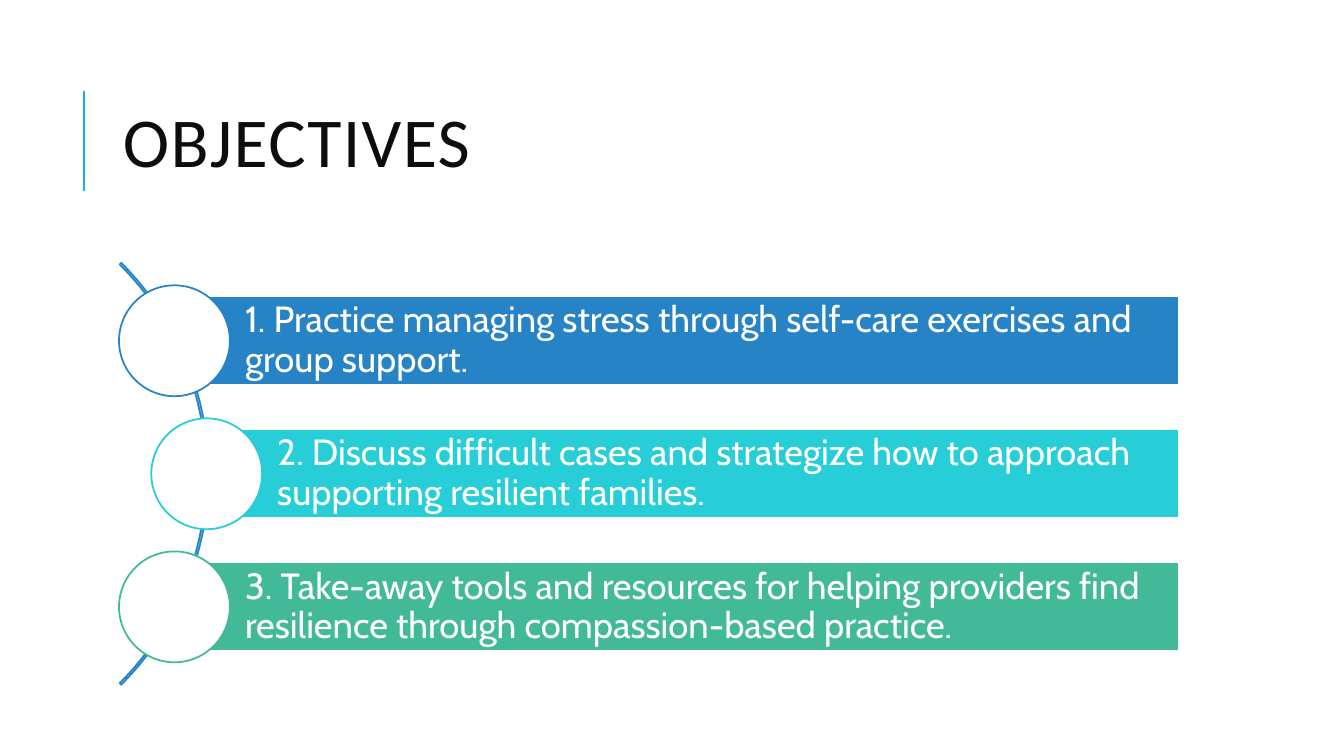
from lxml import etree
from pptx import Presentation, util as u
from pptx.dml.color import RGBColor
from pptx.enum import shapes, text
from pptx.oxml.ns import qn

WHITE, INK, SKY, BLUE = "FFFFFF", "0D0D0D", "1CADE4", "2683C6"


def tint(code):
    return RGBColor.from_string(code)


class Deck:
    """Style and current slide; lengths are on a grid of 100 columns by 100 rows."""

    def __init__(self):
        self.prs = Presentation()
        self.prs.slide_width, self.prs.slide_height = u.Inches(13.33), u.Inches(7.5)
        self.slide = self.prs.slides.add_slide(self.prs.slide_layouts[6])
        self.items = self.slide.shapes

    def col(self, n):
        return round(self.prs.slide_width * n / 100)

    def row(self, n):
        return round(self.prs.slide_height * n / 100)

    def box(self, x, y, w, h):
        return self.col(x), self.row(y), self.col(w), self.row(h)

    def rule(self, x, y1, y2, color):
        line = self.items.add_connector(shapes.MSO_CONNECTOR.STRAIGHT, self.col(x),
                                        self.row(y1), self.col(x), self.row(y2))
        line.line.color.rgb = tint(color)
        line.line.width = u.Pt(1.5)
        etree.SubElement(line._element.spPr, qn("a:effectLst"))

    def shape(self, kind, x, y, w, h, line, fill=None):
        """Place a preset shape by its centre."""
        item = self.items.add_shape(kind, *self.box(x - w / 2, y - h / 2, w, h))
        item.shadow.inherit = False
        if fill:
            item.fill.solid()
            item.fill.fore_color.rgb = tint(fill)
        else:
            item.fill.background()
        item.line.color.rgb = tint(line)
        item.line.width = u.Pt(1.25)
        return item

    def label(self, item, words, font, size, color, space, track=0):
        frame = item.text_frame
        frame.word_wrap = True
        frame.vertical_anchor = text.MSO_ANCHOR.MIDDLE
        para = frame.paragraphs[0]
        para.alignment = text.PP_ALIGN.LEFT
        para.line_spacing = space
        run = para.add_run()
        run.text = words
        run.font.name, run.font.size = font, u.Pt(size)
        run.font.color.rgb = tint(color)
        if track:
            run.font._element.set("spc", str(track * 100))

    def title(self, words, *area):
        item = self.items.add_textbox(*self.box(*area))
        self.label(item, words, "Calibri", 50, INK, 0.8, track=1)

    def arc(self, x, y, w, h):
        item = self.shape(shapes.MSO_SHAPE.BLOCK_ARC, x, y, w, h, BLUE)
        for i, value in enumerate((189, 27, 0.37 / 100)):
            item.adjustments[i] = value

    def bar(self, left, right, y, h, color, words):
        item = self.shape(shapes.MSO_SHAPE.RECTANGLE, (left + right) / 2, y,
                          right - left, h, WHITE, color)
        frame = item.text_frame
        frame.margin_left = self.col(5.25)
        frame.margin_right = frame.margin_top = frame.margin_bottom = u.Inches(0.07)
        self.label(item, words, "Cabin", 26, WHITE, 0.9)

    def disc(self, x, y, color):
        self.shape(shapes.MSO_SHAPE.OVAL, x, y, 8.25, 14.67, color, WHITE)


def main():
    deck = Deck()

    # Heading
    deck.rule(6.25, 25.33, 12, SKY)
    deck.title("OBJECTIVES", 8.4, 8.53, 79.73, 21.87)

    # Objectives along the arc
    mid, pitch = 62.67, 17.6
    deck.arc(-6.68, mid, 44.4, 78.93)
    goals = [
        (12.98, BLUE, "1. Practice managing stress through self-care exercises "
                      "and group support."),
        (15.38, "27CED7", "2. Discuss difficult cases and strategize how to approach "
                          "supporting resilient families."),
        (12.98, "42BA97", "3. Take-away tools and resources for helping providers find "
                          "resilience through compassion-based practice."),
    ]
    for i, (x, color, words) in enumerate(goals):
        y = mid + (i - 1) * pitch
        deck.bar(x, 87.7, y, 11.73, color, words)
        deck.disc(x, y, color)

    deck.prs.save("out.pptx")


if __name__ == "__main__":
    main()
